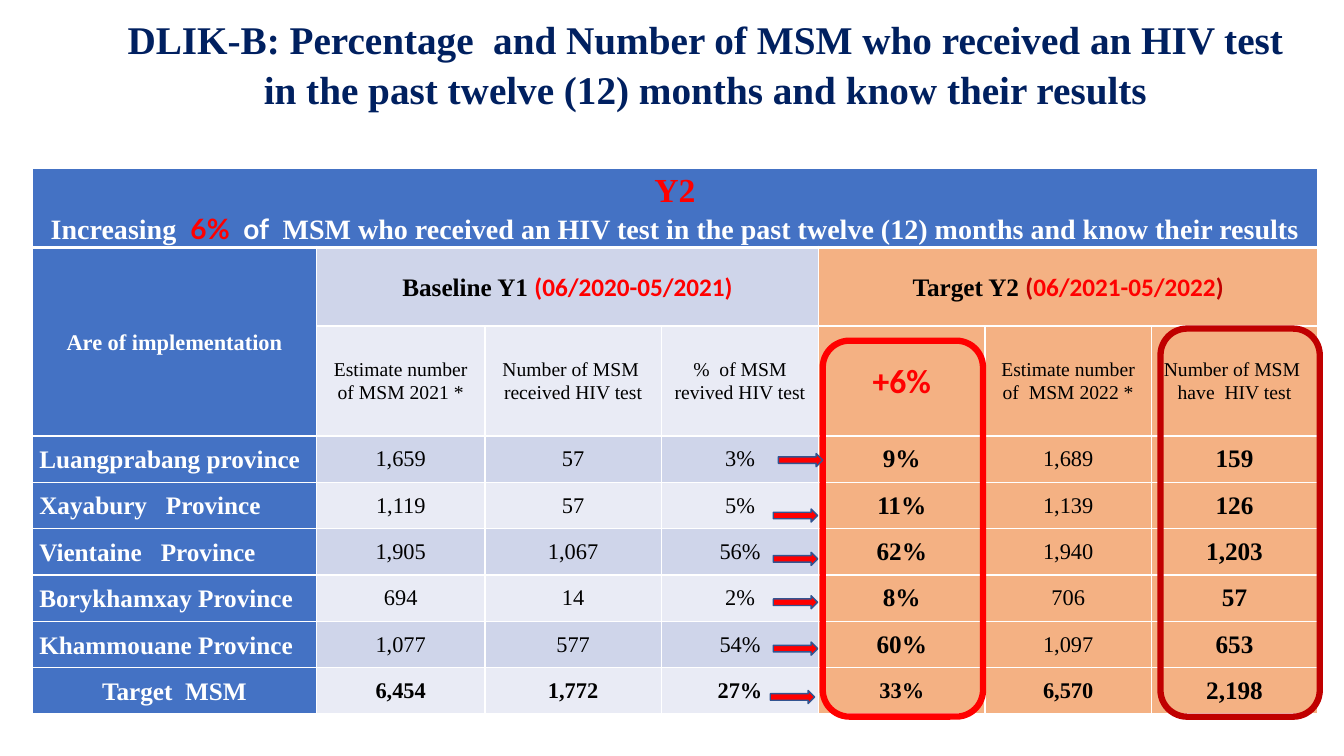
from lxml.etree import SubElement
from pptx import Presentation
from pptx.dml.color import RGBColor
from pptx.enum.shapes import MSO_SHAPE
from pptx.enum.text import MSO_ANCHOR, PP_ALIGN
from pptx.oxml.ns import qn
from pptx.util import Inches, Pt

THEME = {
    "serif": "Times New Roman", "sans": "Calibri", "lato": "Lato",
    "navy": "002060", "blue": "4472C4", "edge": "325491",
    "dark": "CFD5EA", "light": "E9EBF5", "orange": "F4B183",
    "red": "FF0000", "wine": "C00000", "black": "000000", "white": "FFFFFF",
    "title": 28, "big": 24, "lead": 20, "strong": 18, "body": 16, "small": 14,
}

TITLE = ("DLIK-B: Percentage  and Number of MSM who received an HIV test "
         "in the past twelve (12) months and know their results")
BANNER = [
    [("Y2", "serif", "big", "red", True)],
    [("Increasing  ", "serif", "lead", "white", True),
     ("6% ", "lato", "lead", "red", True),
     (" of ", "lato", "lead", "white", True),
     (" MSM who received an HIV test in the past twelve (12) months "
      "and know their results", "serif", "lead", "white", True)],
]
AREA = [[("Are of implementation", "serif", "body", "white", True)]]
BASE = [[("Baseline Y1 ", "serif", "strong", "black", True),
         ("(06/2020-05/2021)", "sans", "strong", "red", True)]]
TARGET = [[("Target Y2 ", "serif", "strong", "black", True),
           ("(", "sans", "strong", "wine", True),
           ("06/2021-05/2022", "sans", "strong", "red", True),
           (")", "sans", "strong", "wine", True)]]
GROWTH = "+6%"
HEADS = ["Estimate number of MSM 2021 *", "Number of MSM  received HIV test",
         "%  of MSM revived HIV test", GROWTH,
         "Estimate number of  MSM 2022 *", "Number of MSM  have  HIV test"]
ROWS = [
    ("Luangprabang province", "1,659", "57", "3%", "9%", "1,689", "159"),
    ("Xayabury   Province", "1,119", "57", "5%", "11%", "1,139", "126"),
    ("Vientaine   Province", "1,905", "1,067", "56%", "62%", "1,940", "1,203"),
    ("Borykhamxay Province", "694", "14", "2%", "8%", "706", "57"),
    ("Khammouane Province", "1,077", "577", "54%", "60%", "1,097", "653"),
    ("Target  MSM", "6,454", "1,772", "27%", "33%", "6,570", "2,198"),
]
WIDTHS = [2.82, 1.67, 1.75, 1.56, 1.65, 1.65, 1.65]
HEIGHTS = [0.78, 0.78, 1.09] + [0.46] * len(ROWS)
FRAMES = [(8.16, 3.38, 1.59, 3.73, "red"), (11.51, 3.26, 1.58, 3.85, "wine")]
ARROWS = [(7.72, 4.5), (7.67, 5.05), (7.67, 5.48),
          (7.67, 5.91), (7.67, 6.37), (7.64, 6.85)]


def color(name):
    return RGBColor.from_string(THEME[name])


def write(frame, paras, align=PP_ALIGN.CENTER, space=1.07):
    frame.text = "\n".join("" for _ in paras)
    for para, runs in zip(frame.paragraphs, paras):
        para.alignment = align
        para.line_spacing = space
        for text, face, size, tint, bold in runs:
            run = para.add_run()
            run.text = text
            run.font.name = THEME[face]
            run.font.size = Pt(THEME[size])
            run.font.color.rgb = color(tint)
            run.font.bold = bold


def border(cell, row):
    props = cell._tc.get_or_add_tcPr()
    thick = {"lnT": row == 1, "lnB": row == 0}
    for side in ("lnL", "lnR", "lnT", "lnB"):
        width = Pt(3 if thick.get(side) else 1)
        line = SubElement(props, qn("a:" + side), w=str(width))
        fill = SubElement(line, qn("a:solidFill"))
        SubElement(fill, qn("a:srgbClr"), val=THEME["white"])


def shade(row, col):
    if row == 0 or col == 0:
        return "blue"
    if col > 3:
        return "orange"
    return "dark" if row % 2 else "light"


def outline(shape, tint, width):
    shape.shadow.inherit = False
    shape.line.color.rgb = color(tint)
    shape.line.width = Pt(width)


def add_title(slide):
    box = slide.shapes.add_textbox(Inches(0.98), Inches(0.04),
                                   Inches(12.03), Inches(1.16))
    frame = box.text_frame
    frame.word_wrap = True
    frame.vertical_anchor = MSO_ANCHOR.MIDDLE
    write(frame, [[(TITLE, "serif", "title", "navy", True)]])


def add_grid(slide):
    table = slide.shapes.add_table(
        len(HEIGHTS), len(WIDTHS), Inches(0.32), Inches(1.67),
        Inches(sum(WIDTHS)), Inches(sum(HEIGHTS))).table
    table.first_row = table.horz_banding = False
    for col, width in zip(table.columns, WIDTHS):
        col.width = Inches(width)
    for row, height in zip(table.rows, HEIGHTS):
        row.height = Inches(height)
    for row in range(len(HEIGHTS)):
        for col in range(len(WIDTHS)):
            cell = table.cell(row, col)
            border(cell, row)
            cell.fill.solid()
            cell.fill.fore_color.rgb = color(shade(row, col))
            cell.vertical_anchor = MSO_ANCHOR.MIDDLE
            side = 0 if row > 2 and col else 0.07
            cell.margin_left = cell.margin_right = Inches(side)
            cell.margin_top = cell.margin_bottom = 0
    for top, left, end, last, paras in (
            (0, 0, 0, 6, BANNER), (1, 0, 2, 0, AREA),
            (1, 1, 1, 3, BASE), (1, 4, 1, 6, TARGET)):
        table.cell(top, left).merge(table.cell(end, last))
        write(table.cell(top, left).text_frame, paras)
    for col, text in enumerate(HEADS, 1):
        style = ("serif", "small", "black", False)
        if text == GROWTH:
            style = ("sans", "big", "red", True)
        write(table.cell(2, col).text_frame, [[(text, *style)]])
    for row, values in enumerate(ROWS, 3):
        total = row == len(HEIGHTS) - 1
        for col, text in enumerate(values):
            large = col in (0, 6) or col == 4 and not total
            style = ("serif", "strong" if large else "body",
                     "black" if col else "white", large or total)
            align = PP_ALIGN.CENTER if col or total else PP_ALIGN.LEFT
            write(table.cell(row, col).text_frame, [[(text, *style)]],
                  align, 1.0 if col else 1.07)


def add_marks(slide):
    for left, top, width, height, tint in FRAMES:
        frame = slide.shapes.add_shape(
            MSO_SHAPE.ROUNDED_RECTANGLE, Inches(left), Inches(top),
            Inches(width), Inches(height))
        frame.fill.background()
        outline(frame, tint, 4.5)
    for left, top in ARROWS:
        arrow = slide.shapes.add_shape(
            MSO_SHAPE.RIGHT_ARROW, Inches(left), Inches(top),
            Inches(0.44), Inches(0.13))
        arrow.fill.solid()
        arrow.fill.fore_color.rgb = color("red")
        outline(arrow, "edge", 1)


def main():
    deck = Presentation()
    deck.slide_width = Inches(13.33)
    deck.slide_height = Inches(7.5)
    slide = deck.slides.add_slide(deck.slide_layouts[6])
    add_title(slide)
    add_grid(slide)
    add_marks(slide)
    deck.save("out.pptx")


if __name__ == "__main__":
    main()
